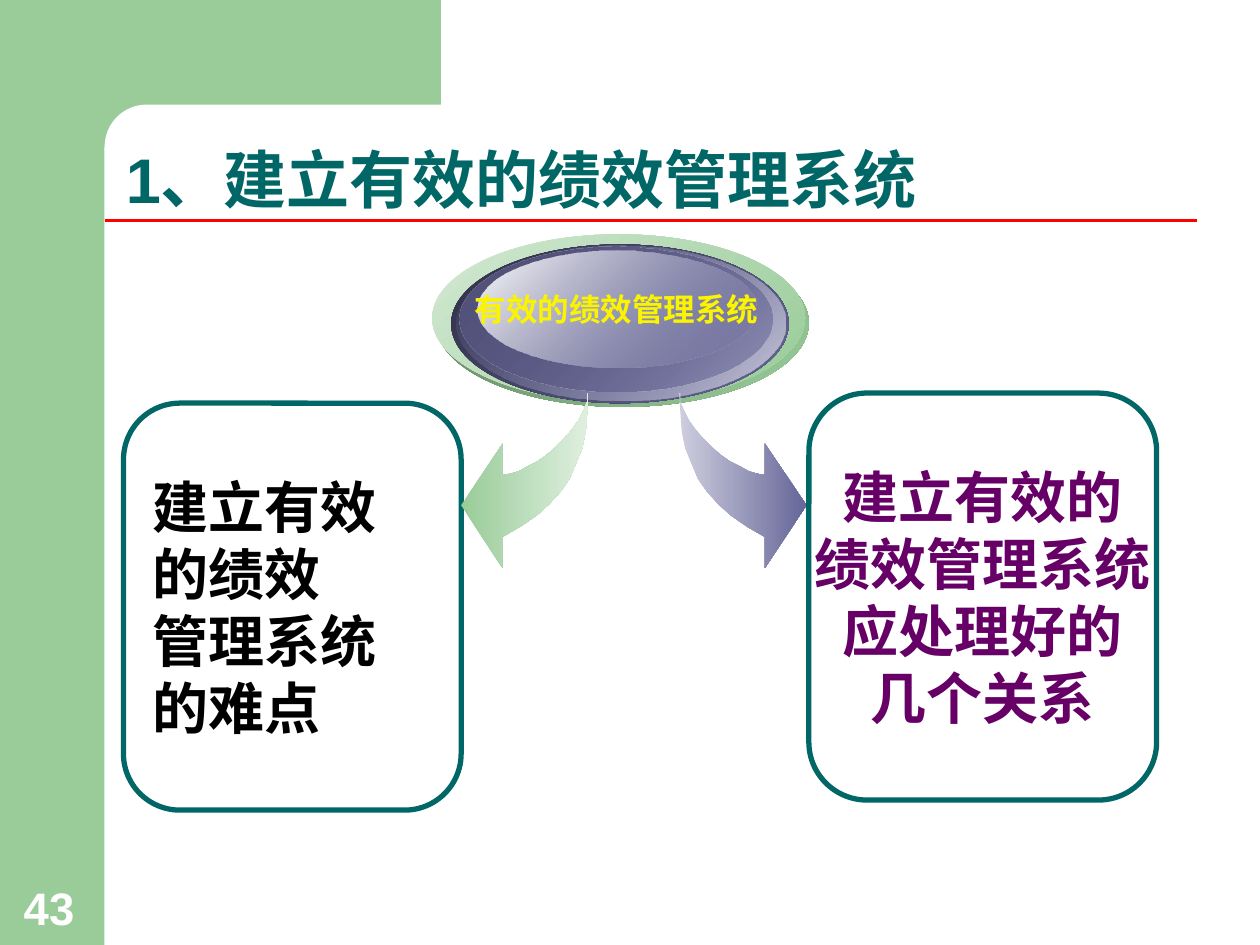
from pptx import Presentation
from pptx import util as u
from pptx.dml import color
from pptx.enum import shapes, text
from pptx.oxml import ns, xmlchemy

deck = Presentation()
deck.slide_width, deck.slide_height = u.Inches(10), u.Inches(7.5)
column, row = deck.slide_width / 100, deck.slide_height / 75
page = deck.slides.add_slide(deck.slide_layouts[6])
KINDS = shapes.MSO_SHAPE
ALIGN, ANCHOR = text.PP_ALIGN, text.MSO_ANCHOR
GREEN, TEAL, VIOLET, WHITE = "99CC99", "006666", "666699", "FFFFFF"
hue = color.RGBColor.from_string


def paint(shape, stops, angle=0):
    shape.shadow.inherit = False
    shape.line.fill.background()
    shape.fill.gradient()
    shape.fill.gradient_angle = -angle % 360
    marks = shape.element.spPr.findall(".//" + ns.qn("a:gs"))
    for stop, mark, (tone, opacity) in zip(shape.fill.gradient_stops, marks, stops):
        stop.color.rgb = hue(tone)
        if opacity < 100:
            alpha = xmlchemy.OxmlElement("a:alpha")
            alpha.set("val", str(opacity * 1000))
            mark[0].append(alpha)


def write(box, lines, tone, frame_format, para_format, font_format):
    frame = box.text_frame
    for name, value in frame_format.items():
        setattr(frame, name, value)
    for index, line in enumerate(lines):
        para = frame.add_paragraph() if index else frame.paragraphs[0]
        for name, value in para_format.items():
            setattr(para, name, value)
        span = para.add_run()
        span.text = line
        for name, value in font_format.items():
            setattr(span.font, name, value)
        span.font.color.rgb = hue(tone)


panels = [
    (KINDS.RECTANGLE, 0, 0, 8.3, 75, GREEN),
    (KINDS.RECTANGLE, 7.5, 0, 27.5, 11.7, GREEN),
    (KINDS.ROUNDED_RECTANGLE, 8.3, 8.3, 55.8, 6.7, WHITE),
]
for kind, left, top, width, height, tone in panels:
    panel = page.shapes.add_shape(kind, *map(int, (left * column, top * row, width * column, height * row)))
    panel.shadow.inherit = False
    panel.fill.solid()
    panel.fill.fore_color.rgb = hue(tone)
    panel.line.fill.background()
    if kind == KINDS.ROUNDED_RECTANGLE:
        panel.adjustments[0] = 0.5

rule = page.shapes.add_connector(
    shapes.MSO_CONNECTOR.STRAIGHT, *map(int, (8.3 * column, 17.5 * row, 95 * column, 17.5 * row))
)
rule.line.color.rgb = hue("FF0000")
rule.line.width = u.Pt(2.25)
rule.element.spPr.append(xmlchemy.OxmlElement("a:effectLst"))

labels = [
    ("43", 0.9, 69.4, 6.4, 5.3, WHITE, 26, 1.0),
    ("1、建立有效的绩效管理系统", 9, 5.2, 73.3, 12.5, TEAL, 36, 0.9),
]
for words, left, top, width, height, tone, size, spacing in labels:
    label = page.shapes.add_textbox(*map(int, (left * column, top * row, width * column, height * row)))
    write(
        label, [words], tone,
        {"word_wrap": True, "vertical_anchor": ANCHOR.BOTTOM},
        {"line_spacing": spacing},
        {"name": "Arial", "size": u.Pt(size), "bold": True},
    )

ellipses = [
    (34.6, 19, 29.6, 13.3, ("618261", 100), (GREEN, 100)),
    (34.3, 18.6, 29.6, 13.3, ("D2E8D2", 100), (GREEN, 100)),
    (35.8, 19.4, 26.8, 12.6, ("2F2F47", 100), (VIOLET, 100)),
    (36.2, 19.5, 26.1, 12.3, (VIOLET, 0), ("CACADB", 100)),
    (36.5, 19.6, 24.8, 11.5, ("515179", 100), (VIOLET, 48)),
    (37.9, 19.9, 22.1, 9.3, (WHITE, 100), (VIOLET, 38)),
]
for left, top, width, height, *stops in ellipses:
    ellipse = page.shapes.add_shape(
        KINDS.OVAL, *map(int, (left * column, top * row, width * column, height * row))
    )
    paint(ellipse, stops, 45)

body_frame = {"word_wrap": False, "vertical_anchor": ANCHOR.MIDDLE}
write(
    ellipse, ["有效的绩效管理系统"], "FAF400", body_frame,
    {"alignment": ALIGN.CENTER},
    {"name": "DejaVu Sans", "size": u.Pt(18), "bold": True},
)

cards = [
    (9.8, 32, 26.8, "000000", ALIGN.LEFT, ["建立有效", "的绩效", "管理系统", "的难点"]),
    (64.2, 31.2, 27.6, "660066", ALIGN.CENTER,
     ["建立有效的", "绩效管理系统", "应处理好的", "几个关系"]),
]
for left, top, width, tone, alignment, lines in cards:
    card = page.shapes.add_shape(
        KINDS.ROUNDED_RECTANGLE, *map(int, (left * column, top * row, width * column, 32.3 * row))
    )
    card.shadow.inherit = False
    card.adjustments[0] = 0.167
    card.fill.background()
    card.line.color.rgb = hue(TEAL)
    card.line.width = u.Pt(3)
    write(
        card, lines, tone, body_frame, {"alignment": alignment},
        {"name": "DejaVu Sans", "size": u.Pt(32), "bold": True},
    )

outline = [
    (46.7, 31.2), (46.6, 32.8), (46.5, 34.2), (46.2, 35.6), (45.7, 36.8), (45.2, 38),
    (44.5, 39), (43.6, 40), (42.6, 40.9), (41.3, 41.8), (39.9, 42.6), (39.9, 45.1),
    (36.6, 40.1), (39.9, 35.2), (39.9, 37.7), (40.5, 37.6), (41.2, 37.4), (41.9, 37),
    (42.7, 36.6), (43.4, 36.1), (44.1, 35.5), (44.8, 34.8), (45.4, 34.1), (45.9, 33.4),
    (46.3, 32.6), (46.6, 31.9), (46.6, 31.2),
]
mirror = [(100.6 - x, y) for x, y in outline]
arrows = [(outline, GREEN, "DFEFDF"), (mirror, "CECEDF", VIOLET)]
for points, start, end in arrows:
    corners = [(int(x * column), int(y * row)) for x, y in points]
    builder = page.shapes.build_freeform(*corners[0])
    builder.add_line_segments(corners[1:], close=True)
    paint(builder.convert_to_shape(), [(start, 100), (end, 100)])

deck.save("out.pptx")
